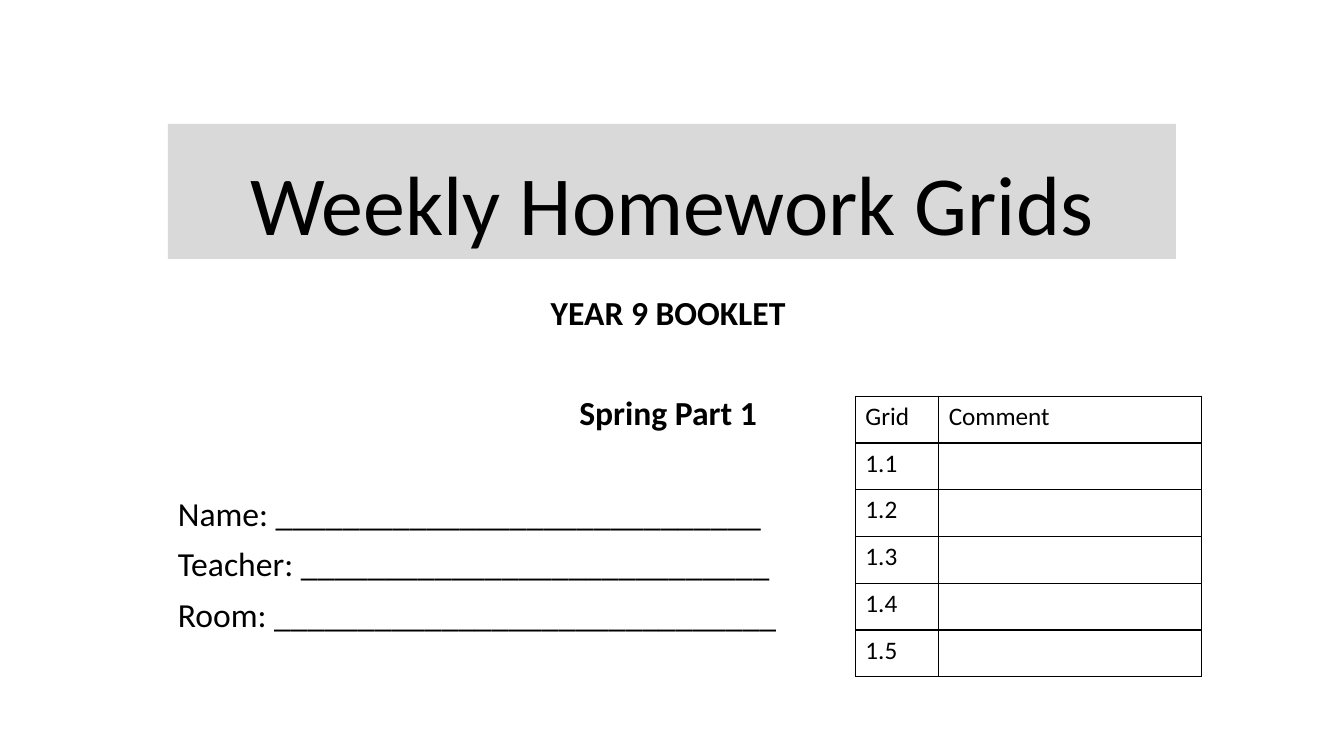
import pptx
import pptx.dml.color
import pptx.enum.text
import pptx.oxml
import pptx.oxml.ns
import pptx.util

Pt = pptx.util.Pt
ALIGN = pptx.enum.text.PP_ALIGN
ANCHOR = pptx.enum.text.MSO_ANCHOR
COLORS = {"text": "000000", "banner": "D9D9D9", "border": "000000"}
LINE_GAP = 10
BLANK_LINE = 36
ROW_HEIGHT = 33.4
COLUMN_WIDTHS = (59.5, 187.5)
GRID_ROWS = [("Grid", "Comment")] + [(f"1.{number}", "") for number in range(1, 6)]
BOOKLET_LINES = [
    ("YEAR 9 BOOKLET ", True, LINE_GAP),
    ("Spring Part 1 ", True, LINE_GAP + BLANK_LINE),
    ("Name: " + "_" * 29, False, LINE_GAP + BLANK_LINE),
    ("Teacher: " + "_" * 28, False, LINE_GAP),
    ("Room: " + "_" * 30, False, LINE_GAP),
]


def rgb(name):
    return pptx.dml.color.RGBColor.from_string(COLORS[name])


def apply(target, formats):
    for attribute, value in formats.items():
        setattr(target, attribute, value)


def write(paragraph, words, size, bold=False, **formats):
    paragraph.text = words
    apply(paragraph, formats)
    apply(paragraph.font, {"name": "Calibri", "size": Pt(size), "bold": bold})
    paragraph.font.color.rgb = rgb("text")


def add_banner(slide):
    banner = slide.shapes.title
    apply(banner, {"left": Pt(120), "top": Pt(88.5), "width": Pt(720), "height": Pt(96.5)})
    banner.fill.solid()
    banner.fill.fore_color.rgb = rgb("banner")
    apply(banner.text_frame, {
        "vertical_anchor": ANCHOR.BOTTOM,
        "word_wrap": True,
        "auto_size": pptx.enum.text.MSO_AUTO_SIZE.NONE,
    })
    write(banner.text_frame.paragraphs[0], "Weekly Homework Grids", 60,
          alignment=ALIGN.CENTER, line_spacing=0.9)


def add_booklet_details(slide):
    details = slide.shapes.add_textbox(Pt(120), Pt(208), Pt(720), Pt(267)).text_frame
    details.word_wrap = True
    for index, (words, heading, gap) in enumerate(BOOKLET_LINES):
        line = details.add_paragraph() if index else details.paragraphs[0]
        write(line, words, 24, heading, line_spacing=0.9, space_before=Pt(gap),
              alignment=ALIGN.CENTER if heading else ALIGN.LEFT)


def add_borders(cell):
    properties = cell._tc.get_or_add_tcPr()
    for index, side in enumerate(("lnL", "lnR", "lnT", "lnB")):
        properties.insert(index, pptx.oxml.parse_xml(
            f'<a:{side} {pptx.oxml.ns.nsdecls("a")} w="{Pt(1)}"><a:solidFill>'
            f'<a:srgbClr val="{COLORS["border"]}"/></a:solidFill></a:{side}>'))


def add_comment_grid(slide):
    grid = slide.shapes.add_table(
        len(GRID_ROWS), len(COLUMN_WIDTHS), Pt(611), Pt(283),
        Pt(sum(COLUMN_WIDTHS)), Pt(ROW_HEIGHT * len(GRID_ROWS))).table
    apply(grid, {"first_row": False, "horz_banding": False})
    for column, width in zip(grid.columns, COLUMN_WIDTHS):
        column.width = Pt(width)
    for row, entries in zip(grid.rows, GRID_ROWS):
        row.height = Pt(ROW_HEIGHT)
        for cell, words in zip(row.cells, entries):
            write(cell.text_frame.paragraphs[0], words, 18)
            cell.fill.background()
            add_borders(cell)


def main():
    """Build the cover slide of the homework booklet."""
    booklet = pptx.Presentation()
    apply(booklet, {"slide_width": Pt(960), "slide_height": Pt(540)})
    cover = booklet.slides.add_slide(booklet.slide_layouts[5])
    add_banner(cover)
    add_booklet_details(cover)
    add_comment_grid(cover)
    booklet.save("out.pptx")


if __name__ == "__main__":
    main()
